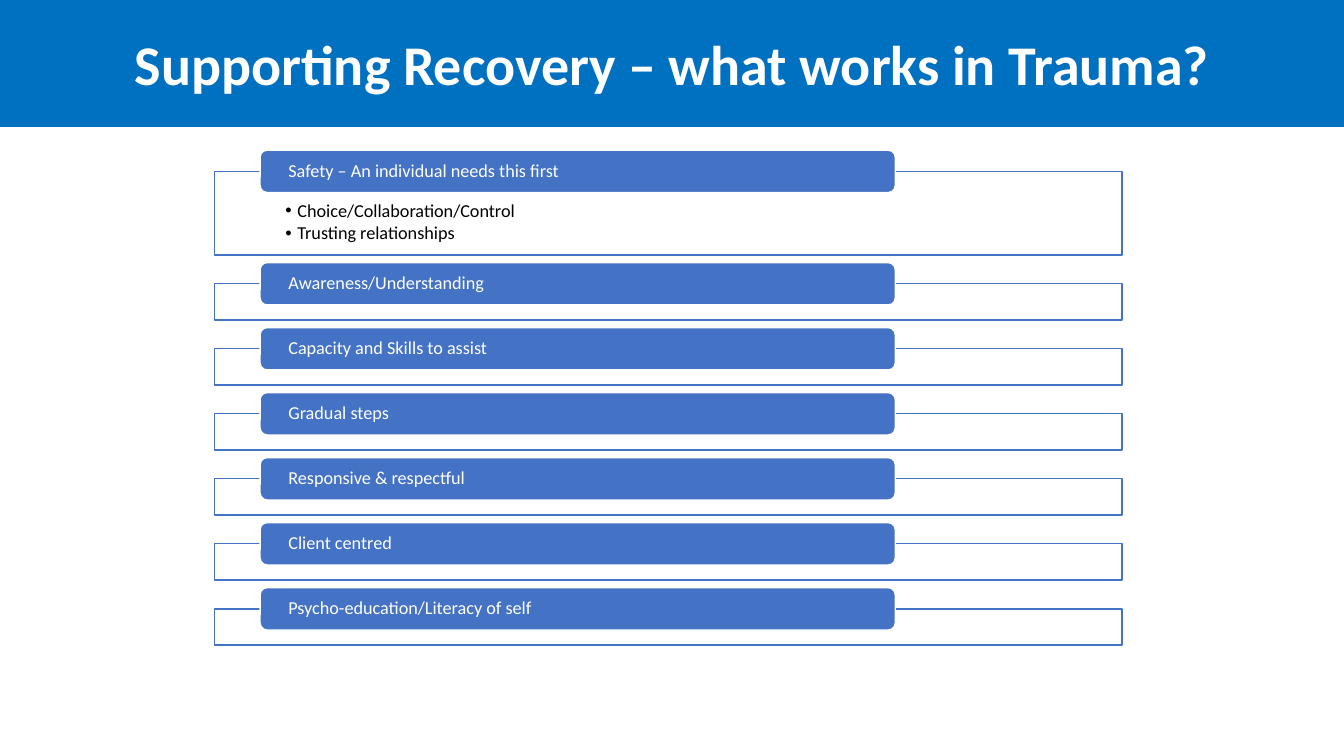
import dataclasses

import pptx
import pptx.dml.color
import pptx.enum.shapes
import pptx.enum.text
import pptx.oxml
import pptx.oxml.ns
import pptx.util

Inches = pptx.util.Inches
Pt = pptx.util.Pt
RGB = pptx.dml.color.RGBColor.from_string
SHAPE = pptx.enum.shapes.MSO_SHAPE
ANCHOR = pptx.enum.text.MSO_ANCHOR
ALIGN = pptx.enum.text.PP_ALIGN


@dataclasses.dataclass(frozen=True)
class Theme:
    font: str = "Calibri"
    banner: str = "0070C0"
    accent: str = "4472C4"
    light: str = "FFFFFF"
    dark: str = "000000"
    title_size: int = 40
    text_size: int = 13


THEME = Theme()
TITLE = "Supporting Recovery – what works in Trauma?"
SECTIONS = [
    ("Safety – An individual needs this first",
     ["Choice/Collaboration/Control", "Trusting relationships"]),
    ("Awareness/Understanding", []),
    ("Capacity and Skills to assist", []),
    ("Gradual steps", []),
    ("Responsive & respectful", []),
    ("Client centred", []),
    ("Psycho-education/Literacy of self", []),
]


def place(sp, box):
    sp.left, sp.top, sp.width, sp.height = (Inches(v) for v in box)


def paint(sp, fill, line=None):
    sp.fill.solid()
    sp.fill.fore_color.rgb = RGB(fill)
    if line:
        sp.line.color.rgb = RGB(line)
        sp.line.width = Pt(1)
    else:
        sp.line.fill.background()


def set_frame(tf, anchor, insets):
    tf.word_wrap = True
    tf.auto_size = pptx.enum.text.MSO_AUTO_SIZE.NONE
    tf.vertical_anchor = anchor
    tf.margin_left, tf.margin_top, tf.margin_right, tf.margin_bottom = (
        Inches(v) for v in insets)


def add_run(p, text, size, color, bold=False):
    r = p.add_run()
    r.text = text
    r.font.name = THEME.font
    r.font.size = Pt(size)
    r.font.bold = bold
    r.font.color.rgb = RGB(color)


def add_banner(slide, box):
    sp = slide.shapes.title
    place(sp, box)
    paint(sp, THEME.banner)
    set_frame(sp.text_frame, ANCHOR.MIDDLE, (0.1, 0.05, 0.1, 0.05))
    p = sp.text_frame.paragraphs[0]
    p.alignment = ALIGN.CENTER
    add_run(p, TITLE, THEME.title_size, THEME.light, bold=True)


def add_bullets(tf, items):
    set_frame(tf, ANCHOR.TOP, (0.7, 0.3, 0.7, 0.1))
    for i, item in enumerate(items):
        p = tf.add_paragraph() if i else tf.paragraphs[0]
        p.line_spacing = 0.9
        p.space_before = Pt(0)
        p.space_after = Pt(2)
        pPr = p._p.get_or_add_pPr()
        pPr.set("marL", str(Inches(0.12)))
        pPr.set("indent", str(Inches(-0.12)))
        bullet = pptx.oxml.parse_xml(
            f'<a:buChar {pptx.oxml.ns.nsdecls("a")} char="•"/>')
        pPr.append(bullet)
        add_run(p, item, THEME.text_size, THEME.dark)


def add_panel(slide, box, items):
    if items:
        sp = slide.placeholders[1]
        place(sp, box)
        add_bullets(sp.text_frame, items)
    else:
        sp = slide.shapes.add_shape(SHAPE.RECTANGLE, *(Inches(v) for v in box))
        sp.shadow.inherit = False
    paint(sp, THEME.light, THEME.accent)
    color = sp.fill._xPr.find(".//" + pptx.oxml.ns.qn("a:srgbClr"))
    color.append(pptx.oxml.parse_xml(
        f'<a:alpha {pptx.oxml.ns.nsdecls("a")} val="90000"/>'))


def add_tab(slide, box, heading):
    sp = slide.shapes.add_shape(
        SHAPE.ROUNDED_RECTANGLE, *(Inches(v) for v in box))
    sp.shadow.inherit = False
    paint(sp, THEME.accent, THEME.light)
    set_frame(sp.text_frame, ANCHOR.MIDDLE, (0.26, 0, 0.26, 0))
    p = sp.text_frame.paragraphs[0]
    p.alignment = ALIGN.LEFT
    p.line_spacing = 0.9
    add_run(p, heading, THEME.text_size, THEME.light)


def add_sections(slide, box):
    left, top, width, height = box
    tab_height = 0.42
    rise = tab_height / 2
    heights = [0.83 if items else 0.36 for _, items in SECTIONS]
    gap = (height - rise - sum(heights)) / (len(SECTIONS) - 1)
    y = top + rise
    for (heading, items), panel_height in zip(SECTIONS, heights):
        add_panel(slide, (left, y, width, panel_height), items)
        add_tab(slide, (left + width * 0.05, y - rise, width * 0.7, tab_height),
                heading)
        y += panel_height + gap


def main():
    prs = pptx.Presentation()
    prs.slide_width = Inches(13.33)
    prs.slide_height = Inches(7.5)
    slide = prs.slides.add_slide(prs.slide_layouts[1])
    add_banner(slide, (0, 0, 13.33, 1.26))
    add_sections(slide, (2.13, 1.49, 9, 4.91))
    prs.save("out.pptx")


if __name__ == "__main__":
    main()
